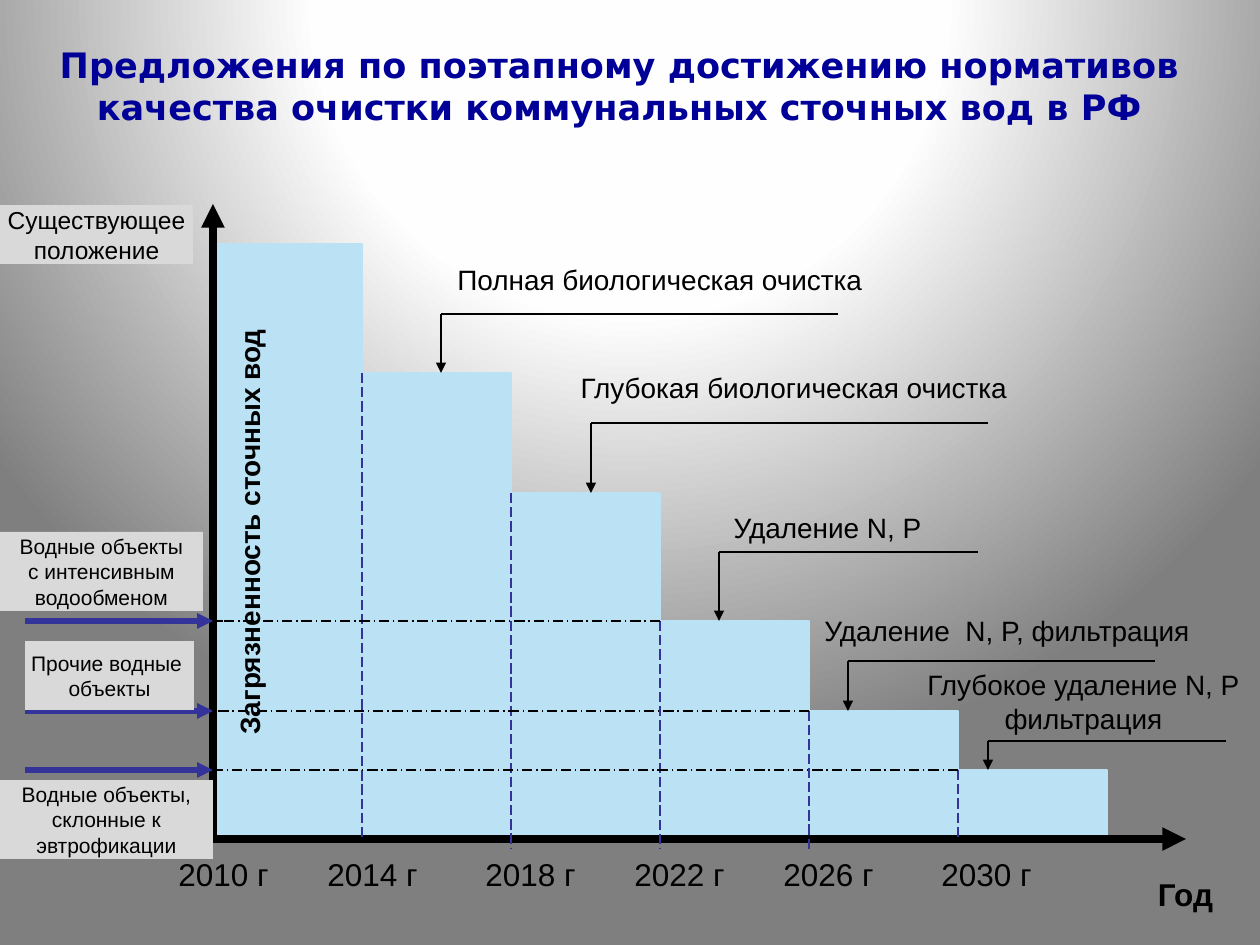
"""Build the slide on staged improvement of municipal wastewater treatment."""
from lxml import etree
from pptx import Presentation
from pptx import util as u
from pptx.dml.color import RGBColor
from pptx.enum import dml, shapes, text
from pptx.oxml import parse_xml
from pptx.oxml.ns import nsdecls, qn

SCALE = 914400 / 126
BLACK = RGBColor(0x00, 0x00, 0x00)
NAVY = RGBColor(0x00, 0x00, 0x99)
INDIGO = RGBColor(0x33, 0x33, 0x99)
SKY = RGBColor(0xBA, 0xE2, 0xF4)
GREY = RGBColor(0xD9, 0xD9, 0xD9)

TITLE = "Предложения по поэтапному достижению нормативов качества очистки коммунальных сточных вод в РФ"
AXIS_X, BASE_Y, STEP = 213, 839, 149
BAR_TOPS = [244, 373, 493, 621, 711, 770]
DASH_ENDS = [839, 849, 849, 849, 839]
YEARS = [("2010 г", 174), ("2014 г", 323), ("2018 г", 481),
         ("2022 г", 630), ("2026 г", 779), ("2030 г", 937)]
CALLOUTS = [
    ("Полная биологическая очистка", (445, 255, 430, 49), 441, 314, 838),
    ("Глубокая биологическая очистка", (569, 363, 450, 49), 591, 423, 988),
    ("Удаление N, P", (689, 512, 277, 30), 719, 552, 978),
    ("Удаление  N, P, фильтрация", (812, 611, 390, 39), 848, 661, 1155),
    ("Глубокое удаление N, P\nфильтрация", (907, 672, 353, 59), 988, 741, 1226),
]
NOTES = [
    ("Существующее\nположение", (0, 205, 193, 59), 14),
    ("Водные объекты\nс интенсивным\nводообменом", (0, 532, 203, 79), 12),
    ("Прочие водные \nобъекты", (25, 641, 169, 69), 12),
    ("Водные объекты,\nсклонные к\nэвтрофикации", (0, 780, 213, 79), 12),
]
BACKGROUND = f"""<a:gradFill {nsdecls('a')} rotWithShape="1"><a:gsLst>
<a:gs pos="0"><a:srgbClr val="FFFFFF"/></a:gs>
<a:gs pos="40000"><a:srgbClr val="FEFEFE"/></a:gs>
<a:gs pos="100000"><a:srgbClr val="7F7F7F"/></a:gs></a:gsLst>
<a:path path="circle"><a:fillToRect l="50000" t="-80000" r="50000" b="180000"/></a:path>
</a:gradFill>"""


def px(*lengths):
    return [u.Emu(round(length * SCALE)) for length in lengths]


def write(shape, content, size, bold=False, color=BLACK, font="Arial", wrap=False):
    frame = shape.text_frame
    frame.text = content
    frame.word_wrap = wrap
    frame.vertical_anchor = text.MSO_ANCHOR.MIDDLE
    frame.margin_left = frame.margin_right = frame.margin_top = frame.margin_bottom = 0
    for paragraph in frame.paragraphs:
        paragraph.alignment = text.PP_ALIGN.CENTER
        for run in paragraph.runs:
            run.font.name, run.font.size = font, u.Pt(size)
            run.font.bold, run.font.color.rgb = bold, color


def add_text(slide, content, box, size, bold=False):
    shape = slide.shapes.add_textbox(*px(*box))
    write(shape, content, size, bold)
    return shape


def add_box(slide, box, color):
    shape = slide.shapes.add_shape(shapes.MSO_SHAPE.RECTANGLE, *px(*box))
    shape.shadow.inherit = False
    shape.fill.solid()
    shape.fill.fore_color.rgb = color
    shape.line.fill.background()
    return shape


def add_line(slide, start, end, color=BLACK, width=0.75, dash=None, arrow=False):
    line = slide.shapes.add_connector(shapes.MSO_CONNECTOR.STRAIGHT, *px(*start, *end))
    line.line.color.rgb = color
    line.line.width = u.Pt(width)
    if dash:
        line.line.dash_style = dash
    if arrow:
        etree.SubElement(line.line._get_or_add_ln(), qn("a:tailEnd"), type="triangle")
    etree.SubElement(line._element.spPr, qn("a:effectLst"))


def set_background(slide):
    fill = slide.background.fill
    fill.solid()
    solid = slide._element.find(".//" + qn("a:solidFill"))
    solid.getparent().replace(solid, parse_xml(BACKGROUND))


def add_chart_area(slide):
    for index, top in enumerate(BAR_TOPS):
        bar = add_box(slide, (AXIS_X + index * STEP, top, STEP, BASE_Y - top), SKY)
        bar.line.color.rgb = SKY
        bar.line.width = u.Pt(0.75)
    for end in [(AXIS_X, 204), (1186, BASE_Y)]:
        add_line(slide, (AXIS_X, BASE_Y), end, width=4.5, arrow=True)
    for year, left in YEARS:
        add_text(slide, year, (left, 859, 99, 30), 18)
    label = add_text(slide, "Загрязненность сточных вод", (-49, 517, 596, 30), 16, True)
    label.rotation = 270
    add_text(slide, "Год", (1136, 869, 99, 49), 18, True)


def add_callouts(slide):
    for (content, box, left, level, right), top in zip(CALLOUTS, BAR_TOPS[1:]):
        add_line(slide, (left, level), (left, top), arrow=True)
        add_line(slide, (left, level), (right, level))
        add_text(slide, content, box, 16)


def add_guides(slide):
    for index, (top, end) in enumerate(zip(BAR_TOPS[1:], DASH_ENDS), 1):
        left = AXIS_X + index * STEP
        add_line(slide, (left, top), (left, end), INDIGO, dash=dml.MSO_LINE.LONG_DASH)
        if index >= 3:
            add_line(slide, (left, top), (AXIS_X, top), dash=dml.MSO_LINE.LONG_DASH_DOT)
    add_line(slide, (25, BAR_TOPS[3]), (223, BAR_TOPS[3]))
    for top in BAR_TOPS[3:]:
        add_line(slide, (25, top), (AXIS_X, top), INDIGO, 3, arrow=True)


def main():
    presentation = Presentation()
    presentation.slide_width, presentation.slide_height = px(1260, 945)
    slide = presentation.slides.add_slide(presentation.slide_layouts[5])
    set_background(slide)
    title = slide.shapes.title
    title.left, title.top, title.width, title.height = px(34, 46, 1171, 80)
    write(title, TITLE, 20, True, NAVY, "DejaVu Sans", wrap=True)
    add_chart_area(slide)
    add_callouts(slide)
    add_guides(slide)
    for content, box, size in NOTES:
        write(add_box(slide, box, GREY), content, size)
    presentation.save("out.pptx")


if __name__ == "__main__":
    main()
